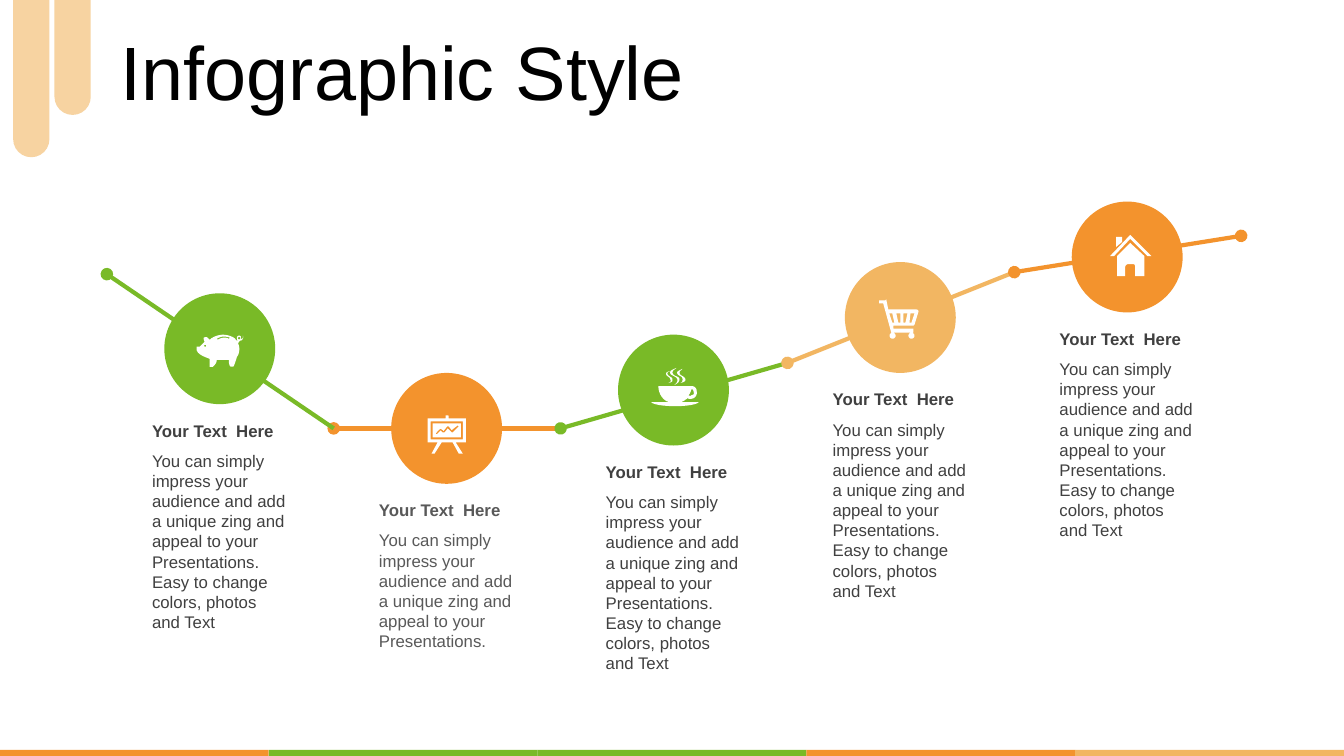
from math import cos, pi, sin

from lxml.etree import SubElement
from pptx import Presentation
from pptx.dml.color import RGBColor
from pptx.enum.shapes import MSO_CONNECTOR, MSO_SHAPE
from pptx.enum.text import MSO_ANCHOR
from pptx.oxml.ns import qn
from pptx.util import Inches, Pt


def disc(cx, cy, r, steps=20):
    return [(cx + r * cos(2 * pi * i / steps), cy + r * sin(2 * pi * i / steps))
            for i in range(steps)]


def box(left, top, right, bottom):
    return [(left, top), (right, top), (right, bottom), (left, bottom)]


THEME = {
    "font": "Arial",
    "green": "79BA27", "orange": "F3932D", "sand": "F2B662", "pale": "F7D3A1",
    "white": "FFFFFF", "black": "000000", "dark": "404040", "grey": "595959",
    "title_size": 54, "text_size": 12, "line_width": 3,
}

TITLE = "Infographic Style"
HEADING = "Your Text  Here"
SHORT = ("You can simply impress your audience and add a unique zing "
         "and appeal to your Presentations.")
LONG = SHORT + " Easy to change colors, photos and Text"

PIG = [
    [(27, 0), (32, 0, 38, 2, 40, 5), (41, 6), (42, 6), (41, 5, 41, 5, 41, 3),
     (41, 2, 42, 1, 43, 1), (45, 1, 45, 2, 45, 3), (45, 4), (46, 4, 47, 5, 47, 1),
     (48, 4, 46, 6, 44, 6), (43, 7, 43, 8, 42, 8), (43, 11), (44, 15, 43, 20, 41, 22),
     (40, 26, 39, 28, 38, 31), (38, 32, 34, 32, 34, 31), (33, 29, 33, 27, 33, 25),
     (29, 25, 24, 25, 21, 25), (21, 28, 19, 30, 17, 32), (14, 32), (14, 24),
     (9, 22, -1, 19, 1, 12), (4, 12), (6, 10, 7, 9, 9, 7), (8, 6, 8, 3, 8, 3),
     (12, 1, 12, 4, 14, 5), (17, 2, 23, 0, 27, 0)],
    [(21, 4), (22, 5), (25, 3, 30, 2, 33, 4), (34, 3), (32, 2, 30, 2, 27, 2),
     (25, 2, 23, 3, 21, 4)],
    disc(9.5, 11, 1),
    disc(43.2, 3.5, 1.2),
]
BOARD = [
    [(19, 0), (20, 0, 21, 0, 21, 1), (21, 3), (38, 3), (38, 27), (28, 27), (35, 38),
     (31, 38), (25, 27), (14, 27), (7, 38), (4, 38), (10, 27), (0, 27), (0, 3),
     (18, 3), (18, 1), (18, 0, 18, 0, 19, 0)],
    box(3, 6, 35, 24),
    box(5, 8, 33, 22),
    [(8, 18), (12, 14), (13, 13.3), (16, 15.5), (19.5, 11), (21, 11), (24, 14.7),
     (30, 10), (31, 11), (25, 17), (24, 17), (20, 13), (17, 17), (15, 17),
     (13, 15), (9, 19)],
]
CUP = [
    [(40, 18), (43, 18, 45, 20, 45, 23), (46, 26, 44, 29, 42, 30),
     (40, 31, 37, 31, 36, 30), (35, 31, 33, 32, 32, 33), (31, 33, 30, 34, 29, 34),
     (47, 34), (46, 36, 36, 38, 24, 38), (11, 38, 1, 36, 0, 34), (18, 34),
     (17, 34, 16, 33, 15, 33), (10, 30, 7, 24, 7, 18)],
    [(40, 21), (39, 23, 39, 25, 37, 27), (38, 28, 39, 28, 40, 27),
     (42, 27, 43, 25, 42, 24), (42, 22, 41, 21, 40, 21)],
    [(19, 3), (17, 4, 16, 4, 16, 6), (17, 9, 22, 9, 21, 12), (21, 14, 20, 14, 17, 15),
     (19, 14, 20, 13, 19, 12), (19, 9, 16, 9, 15, 7), (14, 5, 15, 4, 19, 3)],
    [(31, 1), (29, 3, 28, 3, 28, 5), (28, 8, 34, 8, 34, 12), (33, 14, 32, 14, 29, 15),
     (31, 14, 31, 13, 31, 11), (31, 8, 27, 8, 26, 6), (25, 4, 26, 3, 31, 1)],
    [(25, 0), (23, 2, 21, 2, 21, 5), (22, 9, 29, 8, 28, 12), (27, 15, 26, 15, 23, 17),
     (25, 15, 26, 14, 26, 12), (26, 9, 21, 8, 19, 6), (18, 3, 20, 2, 25, 0)],
]
CART = [
    [(7, 0), (9, 10), (37, 10), (38, 10, 39, 11, 39, 12), (35, 25), (34, 26), (14, 26),
     (14, 29), (34, 29), (34, 33), (12, 33), (4, 4), (0, 4), (0, 1), (6, 1)],
    [(31, 14), (30, 23), (32, 23), (35, 14)],
    [(24, 14), (24, 23), (26, 23), (28, 14)],
    [(17, 14), (19, 23), (21, 23), (21, 14)],
    [(10, 14), (13, 23), (15, 23), (13, 14)],
    disc(13.3, 36, 3),
    disc(32, 36, 3),
]
HOUSE = [
    [(20, 8), (34, 21), (34, 41), (25, 41), (25, 32), (25, 30, 24, 29, 23, 29), (18, 29),
     (17, 29, 15, 30, 15, 32), (15, 41), (7, 41), (7, 21)],
    [(6, 2), (12, 2), (12, 7), (6, 12)],
    [(20, 0), (41, 21), (37, 21), (20, 4), (4, 21), (0, 21)],
]

STEPS = [
    ("green", 2.91, "dark", LONG, PIG, (0.31, 0.41)),
    ("orange", 3.7, "grey", SHORT, BOARD, (0.36, 0.42)),
    ("green", 3.32, "dark", LONG, CUP, (0.33, 0.33)),
    ("sand", 2.6, "dark", LONG, CART, (0.34, 0.37)),
    ("orange", 2, "dark", LONG, HOUSE, (0.38, 0.33)),
]
JOINT_TOPS = [2.72, 4.25, 4.25, 3.6, 2.7, 2.34]
FOOTER = ["orange", "green", "green", "orange", "sand"]
TABS = [(0.13, 1.56), (0.54, 1.14)]

WIDTH, HEIGHT = 13.33, 7.5
PITCH = 2.25
JOINT_LEFT, CIRCLE_LEFT, TEXT_LEFT = 1.06, 1.63, 1.41
CIRCLE, TEXT_WIDTH, HEADING_DROP, HEADING_HEIGHT = 1.1, 1.53, 1.21, 0.3
TAB_WIDTH, FOOTER_HEIGHT = 0.36, 0.06

deck = Presentation()
deck.slide_width, deck.slide_height = Inches(WIDTH), Inches(HEIGHT)
slide = deck.slides.add_slide(deck.slide_layouts[6])


def colour(name):
    return RGBColor.from_string(THEME[name])


def paint(shape, fill):
    shape.shadow.inherit = False
    shape.fill.solid()
    shape.fill.fore_color.rgb = colour(fill)
    shape.line.fill.background()
    return shape


def add_block(kind, fill, *place):
    return paint(slide.shapes.add_shape(kind, *map(Inches, place)), fill)


def add_text(text, place, ink, size="text_size", bold=False, anchor=MSO_ANCHOR.TOP):
    frame = slide.shapes.add_textbox(*map(Inches, place)).text_frame
    frame.word_wrap, frame.vertical_anchor = True, anchor
    paragraph = frame.paragraphs[0]
    run = paragraph.add_run()
    run.text = text
    for key, value in {"name": THEME["font"], "size": Pt(THEME[size]), "bold": bold}.items():
        setattr(run.font, key, value)
    run.font.color.rgb = colour(ink)
    return paragraph


def add_link(start, end, ink, ends):
    link = slide.shapes.add_connector(MSO_CONNECTOR.STRAIGHT, *map(Inches, start + end))
    link.line.color.rgb = colour(ink)
    link.line.width = Pt(THEME["line_width"])
    for tag in ends:
        SubElement(link.line._get_or_add_ln(), qn(tag), type="oval")
    SubElement(link._element.spPr, qn("a:effectLst"))


def flatten(outline, steps=6):
    points = []
    for node in outline:
        if len(node) == 2:
            points.append(node)
            continue
        a, b, c, d = points[-1], node[:2], node[2:4], node[4:]
        for t in (i / steps for i in range(1, steps + 1)):
            u = 1 - t
            points.append(tuple(u**3 * a[k] + 3 * u * u * t * b[k] + 3 * u * t * t * c[k]
                                + t**3 * d[k] for k in (0, 1)))
    return [(x * 100, y * 100) for x, y in points]


def add_icon(outlines, left, top):
    first, *others = map(flatten, outlines)
    builder = slide.shapes.build_freeform(*first[0], scale=Inches(1) / 10000)
    builder.add_line_segments(first[1:], close=True)
    for points in others:
        builder.move_to(*points[0])
        builder.add_line_segments(points[1:], close=True)
    paint(builder.convert_to_shape(Inches(left), Inches(top)), "white")


bar = WIDTH / len(FOOTER)
for column, fill in enumerate(FOOTER):
    add_block(MSO_SHAPE.RECTANGLE, fill, column * bar, HEIGHT - FOOTER_HEIGHT, bar, FOOTER_HEIGHT)
for left, height in TABS:
    tab = add_block(MSO_SHAPE.ROUND_2_SAME_RECTANGLE, "pale", left, 0, TAB_WIDTH, height)
    tab.adjustments[0] = 0.5
    tab.rotation = 180

title = add_text(TITLE, (1.1, 0.36, 11.85, 0.79), "black", "title_size", anchor=MSO_ANCHOR.MIDDLE)
title.line_spacing, title.space_before = 0.9, Pt(10)

joints = [(JOINT_LEFT + i * PITCH, top) for i, top in enumerate(JOINT_TOPS)]
last = len(STEPS) - 1
for i in [*range(1, len(STEPS)), 0]:
    ends = ["a:headEnd", "a:tailEnd"] if i == last else ["a:headEnd"]
    add_link(joints[i], joints[i + 1], STEPS[i][0], ends)

for i, (fill, top, ink, body, icon, (dx, dy)) in enumerate(STEPS):
    circle_left, text_left = CIRCLE_LEFT + i * PITCH, TEXT_LEFT + i * PITCH
    heading_top = top + HEADING_DROP
    body_height = 1.31 if body == SHORT else 1.92
    add_block(MSO_SHAPE.OVAL, fill, circle_left, top, CIRCLE, CIRCLE)
    add_text(HEADING, (text_left, heading_top, TEXT_WIDTH, HEADING_HEIGHT), ink, bold=True)
    add_text(body, (text_left, heading_top + HEADING_HEIGHT, TEXT_WIDTH, body_height), ink)
    add_icon(icon, circle_left + dx, top + dy)

deck.save("out.pptx")
